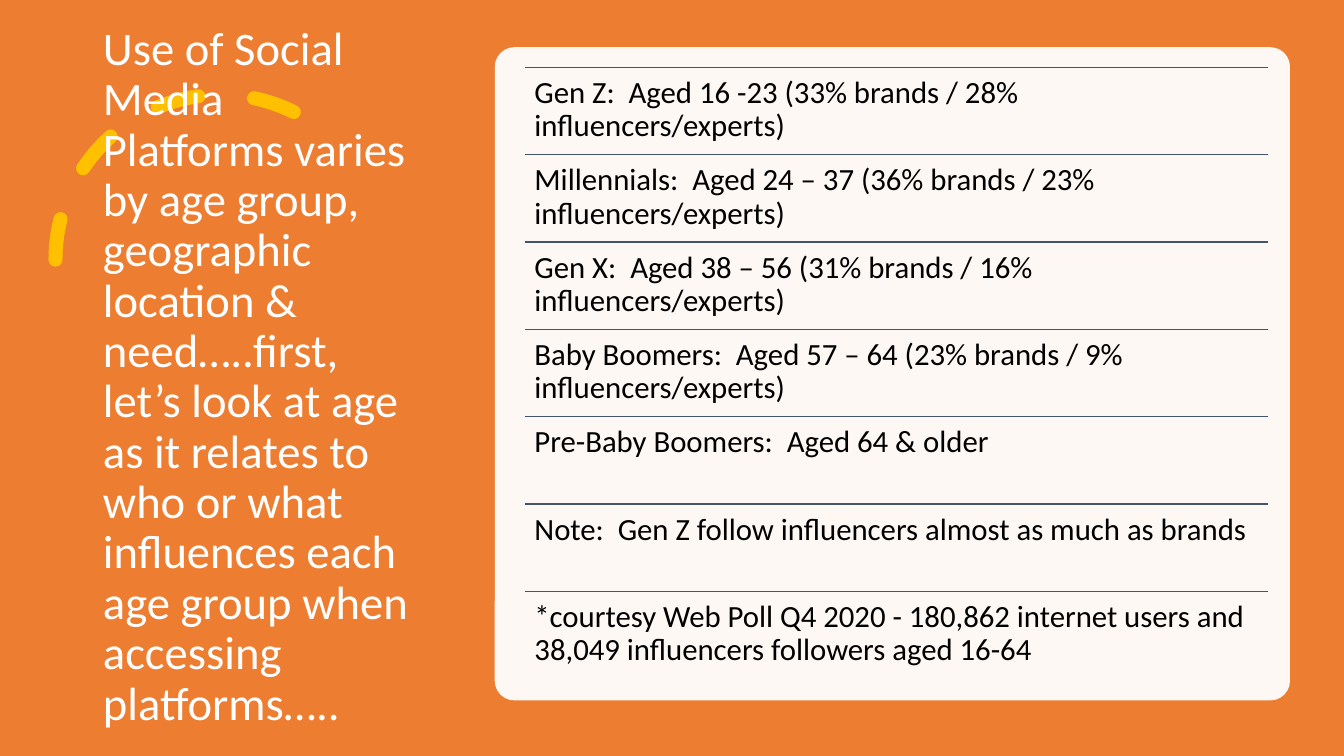
from dataclasses import dataclass

from lxml.etree import SubElement
from pptx import Presentation
from pptx.dml.color import RGBColor
from pptx.enum.dml import MSO_LINE
from pptx.enum.shapes import MSO_CONNECTOR, MSO_SHAPE
from pptx.enum.text import MSO_ANCHOR, MSO_AUTO_SIZE, PP_ALIGN
from pptx.oxml.ns import qn
from pptx.util import Cm, Pt

ORANGE = RGBColor(0xED, 0x7D, 0x31)
GOLD = RGBColor(0xFF, 0xC0, 0x00)
SLATE = RGBColor(0x44, 0x54, 0x6A)
WHITE = RGBColor(0xFF, 0xFF, 0xFF)
BLACK = RGBColor(0x00, 0x00, 0x00)
FONT = "Calibri"

SLIDE_WIDTH, SLIDE_HEIGHT = 33.87, 19.05
ROW_LEFT, ROW_TOP, ROW_WIDTH, ROW_HEIGHT = 13.23, 1.7, 18.72, 2.2
ROW_INSET = 0.24

TITLE = (
    "Use of Social Media Platforms varies by age group, geographic location & "
    "need…..first, let’s look at age as it relates to who or what influences "
    "each age group when accessing platforms….."
)
FACTS = [
    "Gen Z:  Aged 16 -23 (33% brands / 28% influencers/experts)",
    "Millennials:  Aged 24 – 37 (36% brands / 23% influencers/experts)",
    "Gen X:  Aged 38 – 56 (31% brands / 16% influencers/experts)",
    "Baby Boomers:  Aged 57 – 64 (23% brands / 9% influencers/experts)",
    "Pre-Baby Boomers:  Aged 64 & older",
    "Note:  Gen Z follow influencers almost as much as brands",
    "*courtesy Web Poll Q4 2020 - 180,862 internet users and "
    "38,049 influencers followers aged 16-64",
]


@dataclass(frozen=True)
class FactRow:
    text: str
    top: float


def add_panel(page, kind, left: float, top: float, width: float, height: float, color: RGBColor):
    panel = page.shapes.add_shape(kind, Cm(left), Cm(top), Cm(width), Cm(height))
    panel.shadow.inherit = False
    panel.fill.solid()
    panel.fill.fore_color.rgb = color
    panel.line.fill.background()
    return panel


def write_text(frame, text: str, size: float, color: RGBColor):
    frame.word_wrap = True
    frame.auto_size = MSO_AUTO_SIZE.NONE
    para = frame.paragraphs[0]
    para.alignment = PP_ALIGN.LEFT
    para.line_spacing = 0.9
    span = para.add_run()
    span.text = text
    span.font.name = FONT
    span.font.size = Pt(size)
    span.font.color.rgb = color
    return para


def add_dashed_arc(page) -> None:
    arc = page.shapes.add_shape(MSO_SHAPE.ARC, Cm(1.4), Cm(2.39), Cm(8.31), Cm(8.31))
    arc.shadow.inherit = False
    arc.adjustments[0] = 146.13
    arc.adjustments[1] = 0
    arc.fill.background()
    arc.line.color.rgb = GOLD
    arc.line.width = Pt(10)
    arc.line.dash_style = MSO_LINE.DASH
    properties = arc.element.spPr
    properties.find(qn("a:ln")).set("cap", "rnd")
    properties.find(qn("a:xfrm")).set("flipH", "1")


def place_title(page) -> None:
    title = page.shapes.title
    title.left, title.top, title.width, title.height = Cm(2.34), Cm(1.78), Cm(8.2), Cm(15.47)
    title.text_frame.vertical_anchor = MSO_ANCHOR.MIDDLE
    write_text(title.text_frame, TITLE, 33.3, WHITE)
    # Bring the title in front of the background and the arc
    title.element.getparent().append(title.element)


def add_card(page) -> None:
    card = add_panel(page, MSO_SHAPE.ROUNDED_RECTANGLE, 12.47, 1.19, 20.04, 16.46, WHITE)
    card.adjustments[0] = 0.03
    color = card.element.spPr.find(qn("a:solidFill")).find(qn("a:srgbClr"))
    SubElement(color, qn("a:alpha")).set("val", "95000")


def add_fact_row(group, row: FactRow) -> None:
    left, top, width = Cm(ROW_LEFT), Cm(row.top), Cm(ROW_WIDTH)
    rule = group.shapes.add_connector(MSO_CONNECTOR.STRAIGHT, left, top, left + width, top)
    rule.line.color.rgb = SLATE
    rule.line.width = Pt(1)
    SubElement(rule.element.spPr, qn("a:effectLst"))

    box = group.shapes.add_textbox(left, top, width, Cm(ROW_HEIGHT))
    frame = box.text_frame
    frame.margin_left = frame.margin_right = Cm(ROW_INSET)
    frame.margin_top = frame.margin_bottom = Cm(ROW_INSET)
    frame.vertical_anchor = MSO_ANCHOR.TOP
    write_text(frame, row.text, 22, BLACK).space_after = Pt(7.7)


def main() -> None:
    deck = Presentation()
    deck.slide_width, deck.slide_height = Cm(SLIDE_WIDTH), Cm(SLIDE_HEIGHT)
    page = deck.slides.add_slide(deck.slide_layouts.get_by_name("Title Only"))

    # Background, arc and title
    add_panel(page, MSO_SHAPE.RECTANGLE, 0, 0, SLIDE_WIDTH, SLIDE_HEIGHT, ORANGE)
    add_dashed_arc(page)
    place_title(page)

    # Card with ruled rows
    add_card(page)
    group = page.shapes.add_group_shape()
    for index, text in enumerate(FACTS):
        add_fact_row(group, FactRow(text, ROW_TOP + index * ROW_HEIGHT))

    deck.save("out.pptx")


if __name__ == "__main__":
    main()
